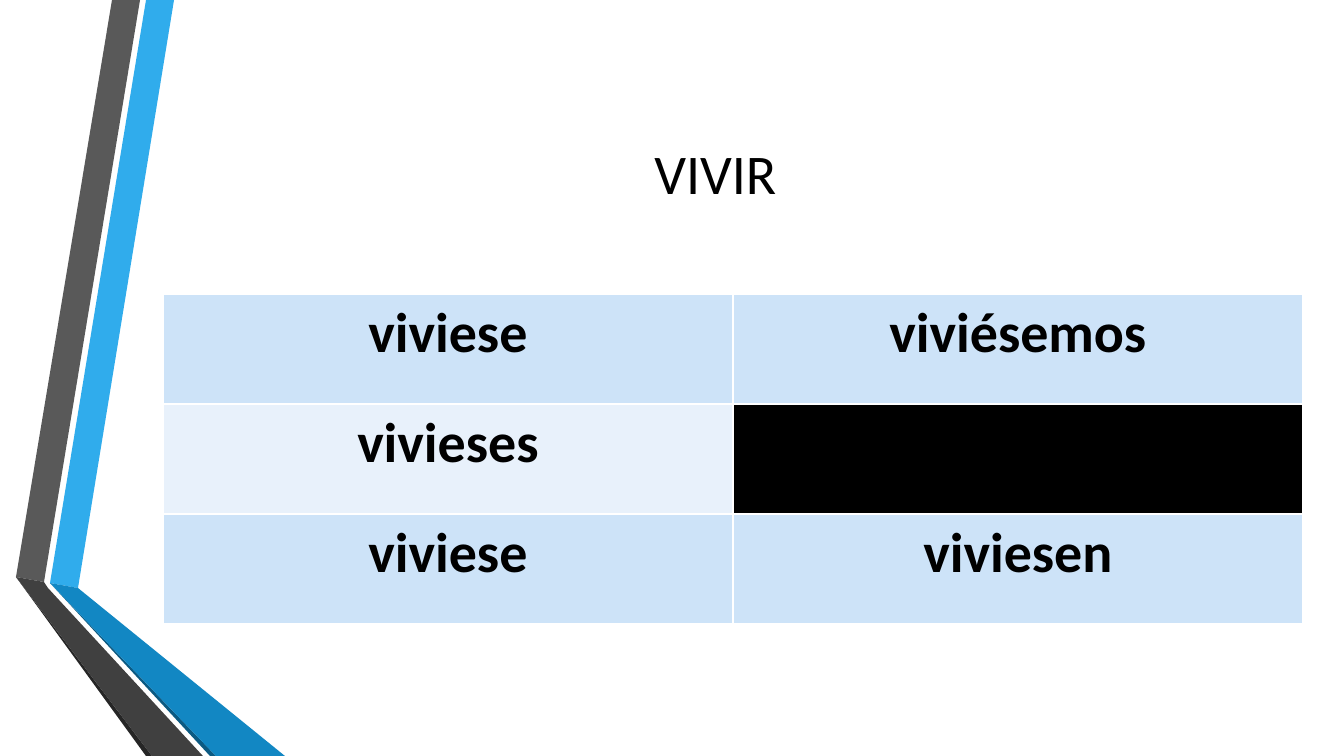
from lxml import etree
from pptx import Presentation
from pptx.dml.color import RGBColor
from pptx.enum import text
from pptx.oxml import ns
from pptx.util import Emu, Pt

# Content
TITLE = "VIVIR"
VERB_FORMS = [
    ("viviese", "viviésemos"),
    ("vivieses", ""),
    ("viviese", "viviesen"),
]
ROW_FILLS = ["CDE3F8", "E8F1FB", "CDE3F8"]
EMPTY_FILL = "000000"
FONT, FONT_SIZE, INK = "Calibri", 40, "000000"

# Ribbons at the left edge: fill and corner points in px
RIBBONS = [
    ("30ACEC", [(50, 583), (78, 588), (174, 0), (146, 0)]),
    ("595959", [(140, 0), (112, 0), (16, 577), (44, 582)]),
    ("262626", [(16, 577), (146, 756), (152, 756)]),
    ("0C5A82", [(50, 583), (210, 756), (216, 756)]),
    ("1287C3", [(50, 583), (216, 756), (285, 756), (78, 588)]),
    ("404040", [(203, 756), (48, 588), (44, 582), (16, 577), (152, 756)]),
]

# Layout in px
EMU_PER_PX = 914400 / 100.8
SLIDE_SIZE = (1344, 756)
TITLE_BOX = (163, 76, 1105, 193)
TABLE_LEFT, TABLE_TOP = 163, 294
COLUMN_WIDTH, ROW_HEIGHT = 570, 110


def px(length):
    return Emu(round(length * EMU_PER_PX))


def color(value):
    return RGBColor.from_string(value)


def write(paragraph, words, bold=False):
    paragraph.alignment = text.PP_ALIGN.CENTER
    run = paragraph.add_run()
    run.text = words
    run.font.name = FONT
    run.font.size = Pt(FONT_SIZE)
    run.font.bold = bold
    run.font.color.rgb = color(INK)


def add_borders(cell, value="FFFFFF"):
    properties = cell._tc.get_or_add_tcPr()
    for index, side in enumerate(("a:lnL", "a:lnR", "a:lnT", "a:lnB")):
        line = etree.Element(ns.qn(side), w=str(Pt(1)))
        fill = etree.SubElement(line, ns.qn("a:solidFill"))
        etree.SubElement(fill, ns.qn("a:srgbClr"), val=value)
        properties.insert(index, line)


presentation = Presentation()
presentation.slide_width, presentation.slide_height = map(px, SLIDE_SIZE)
slide = presentation.slides.add_slide(presentation.slide_layouts[6])

# Ribbons
for fill, points in RIBBONS:
    builder = slide.shapes.build_freeform(*points[0], scale=EMU_PER_PX)
    builder.add_line_segments(points[1:], close=True)
    ribbon = builder.convert_to_shape()
    ribbon.shadow.inherit = False
    ribbon.fill.solid()
    ribbon.fill.fore_color.rgb = color(fill)
    ribbon.line.fill.background()

# Title
title = slide.shapes.add_textbox(*map(px, TITLE_BOX))
title.text_frame.word_wrap = True
title.text_frame.vertical_anchor = text.MSO_ANCHOR.MIDDLE
write(title.text_frame.paragraphs[0], TITLE)

# Table of verb forms
row_count, column_count = len(VERB_FORMS), len(VERB_FORMS[0])
table = slide.shapes.add_table(
    row_count, column_count, px(TABLE_LEFT), px(TABLE_TOP),
    px(COLUMN_WIDTH * column_count), px(ROW_HEIGHT * row_count)).table
table.first_row = table.horz_banding = False
for column in table.columns:
    column.width = px(COLUMN_WIDTH)
for row, forms, row_fill in zip(table.rows, VERB_FORMS, ROW_FILLS):
    row.height = px(ROW_HEIGHT)
    for cell, form in zip(row.cells, forms):
        cell.fill.solid()
        cell.fill.fore_color.rgb = color(row_fill if form else EMPTY_FILL)
        add_borders(cell)
        if form:
            write(cell.text_frame.paragraphs[0], form, bold=True)

presentation.save("out.pptx")
